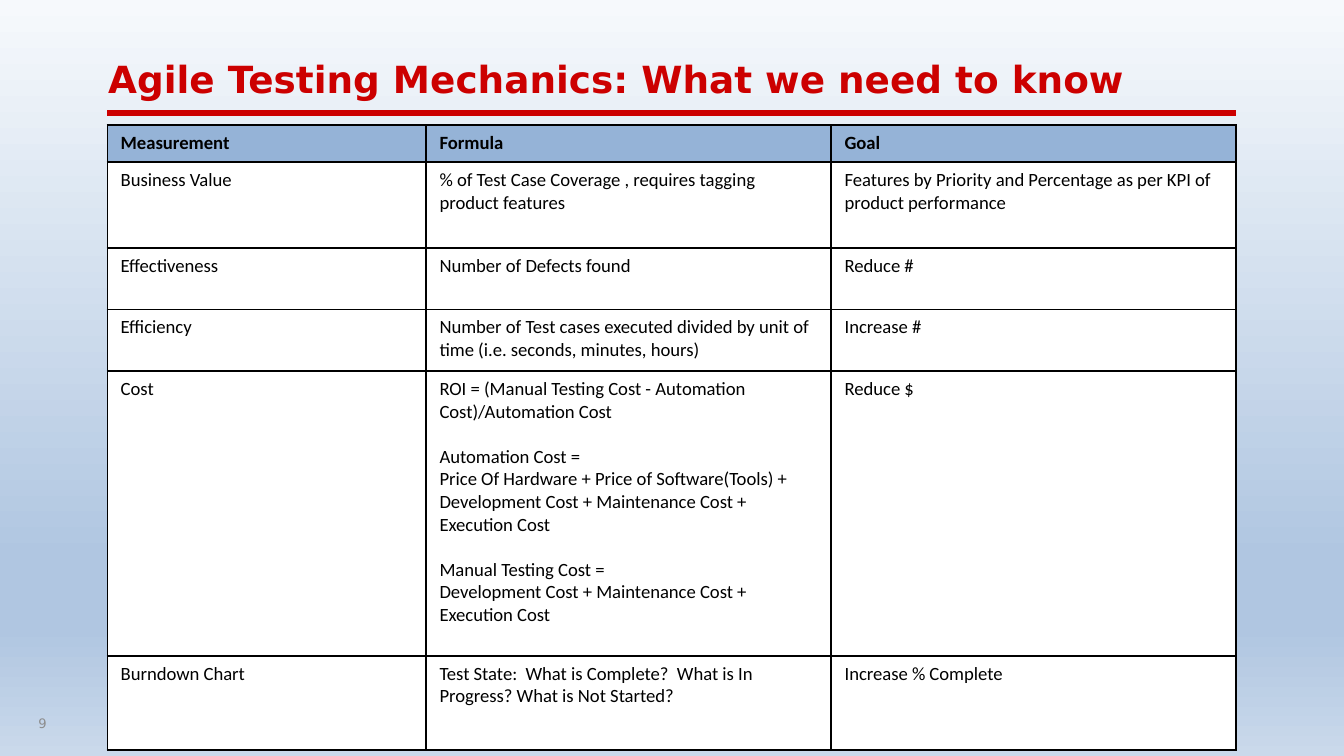
from pptx import Presentation
from pptx.dml.color import RGBColor
from pptx.enum.shapes import MSO_CONNECTOR
from pptx.enum.text import MSO_ANCHOR, PP_ALIGN
from pptx.oxml.ns import qn
from pptx.util import Pt
from lxml.etree import SubElement


def rgb(code):
    return RGBColor.from_string(code)


def label(text, box, size, color, anchor, align, bold=False):
    """Add a text box without margins; box is left, top, width, height."""
    frame = slide.shapes.add_textbox(*map(Pt, box)).text_frame
    frame.word_wrap = True
    frame.margin_left = frame.margin_right = 0
    frame.margin_top = frame.margin_bottom = 0
    frame.vertical_anchor = anchor
    frame.text = text
    para = frame.paragraphs[0]
    para.alignment = align
    font = para.runs[0].font
    font.name, font.size, font.bold = "DejaVu Sans", Pt(size), bold
    font.color.rgb = rgb(color)


RED = "CC0000"
STOPS = [(0, "F6F9FC"), (74, "B0C6E1"), (83, "B0C6E1"), (100, "CAD9EB")]
COLS = [170.8, 217, 217]
HEIGHTS = [19.8, 46, 33, 33, 152.6, 50.4]
COSTS = [
    "ROI = (Manual Testing Cost - Automation Cost)/Automation Cost",
    "Automation Cost =",
    "Price Of Hardware + Price of Software(Tools) + Development Cost"
    " + Maintenance Cost + Execution Cost",
    "Manual Testing Cost =",
    "Development Cost + Maintenance Cost + Execution Cost",
]
ROWS = [
    ("Measurement", "Formula", "Goal"),
    ("Business Value",
     "% of Test Case Coverage , requires tagging product features",
     "Features by Priority and Percentage as per KPI of product performance"),
    ("Effectiveness", "Number of Defects found", "Reduce #"),
    ("Efficiency",
     "Number of Test cases executed divided by unit of time"
     " (i.e. seconds, minutes, hours)",
     "Increase #"),
    ("Cost", "\n".join(COSTS), "Reduce $"),
    ("Burndown Chart",
     "Test State:  What is Complete?  What is In Progress?"
     " What is Not Started?",
     "Increase % Complete"),
]

deck = Presentation()
deck.slide_width, deck.slide_height = Pt(720), Pt(405)
slide = deck.slides.add_slide(deck.slide_layouts[6])

# Background gradient, running downwards
back = slide.background.fill
back.gradient()
back.gradient_angle = 270
stops = next(slide.element.iter(qn("a:gsLst")))
stops.clear()
for pos, color in STOPS:
    stop = SubElement(stops, qn("a:gs"), pos=str(pos * 1000))
    SubElement(stop, qn("a:srgbClr"), val=color)

# Title, rule and page number
rule = slide.shapes.add_connector(
    MSO_CONNECTOR.STRAIGHT, Pt(57.5), Pt(60.7), Pt(662), Pt(60.7))
rule.line.color.rgb = rgb(RED)
rule.line.width = Pt(3)
SubElement(rule._element.spPr, qn("a:effectLst"))
label("9", (13.7, 380, 18, 15), 7, "8C8C8C", MSO_ANCHOR.MIDDLE, PP_ALIGN.CENTER)
label("Agile Testing Mechanics: What we need to know", (58, 16, 604, 38),
      20, RED, MSO_ANCHOR.BOTTOM, PP_ALIGN.LEFT, True)

# Table of measurements
table = slide.shapes.add_table(
    len(ROWS), len(COLS), Pt(57.5), Pt(67), Pt(sum(COLS)),
    Pt(sum(HEIGHTS))).table
for col, width in zip(table.columns, COLS):
    col.width = Pt(width)
for r, (texts, height) in enumerate(zip(ROWS, HEIGHTS)):
    table.rows[r].height = Pt(height)
    for c, text in enumerate(texts):
        cell = table.cell(r, c)
        cell.text_frame.text = text
        for para in cell.text_frame.paragraphs:
            if para.text in (COSTS[1], COSTS[3]):
                para.space_before = Pt(12)
            font = para.runs[0].font
            font.name, font.size, font.bold = "Calibri", Pt(10), r == 0
            font.color.rgb = rgb("000000")
        props = cell._tc.get_or_add_tcPr()
        for side in ("lnL", "lnR", "lnT", "lnB"):
            edge = SubElement(props, qn(f"a:{side}"), w=str(Pt(1)))
            ink = SubElement(edge, qn("a:solidFill"))
            SubElement(ink, qn("a:srgbClr"), val="000000")
        cell.fill.solid()
        cell.fill.fore_color.rgb = rgb("FFFFFF" if r else "95B3D7")

deck.save("out.pptx")
